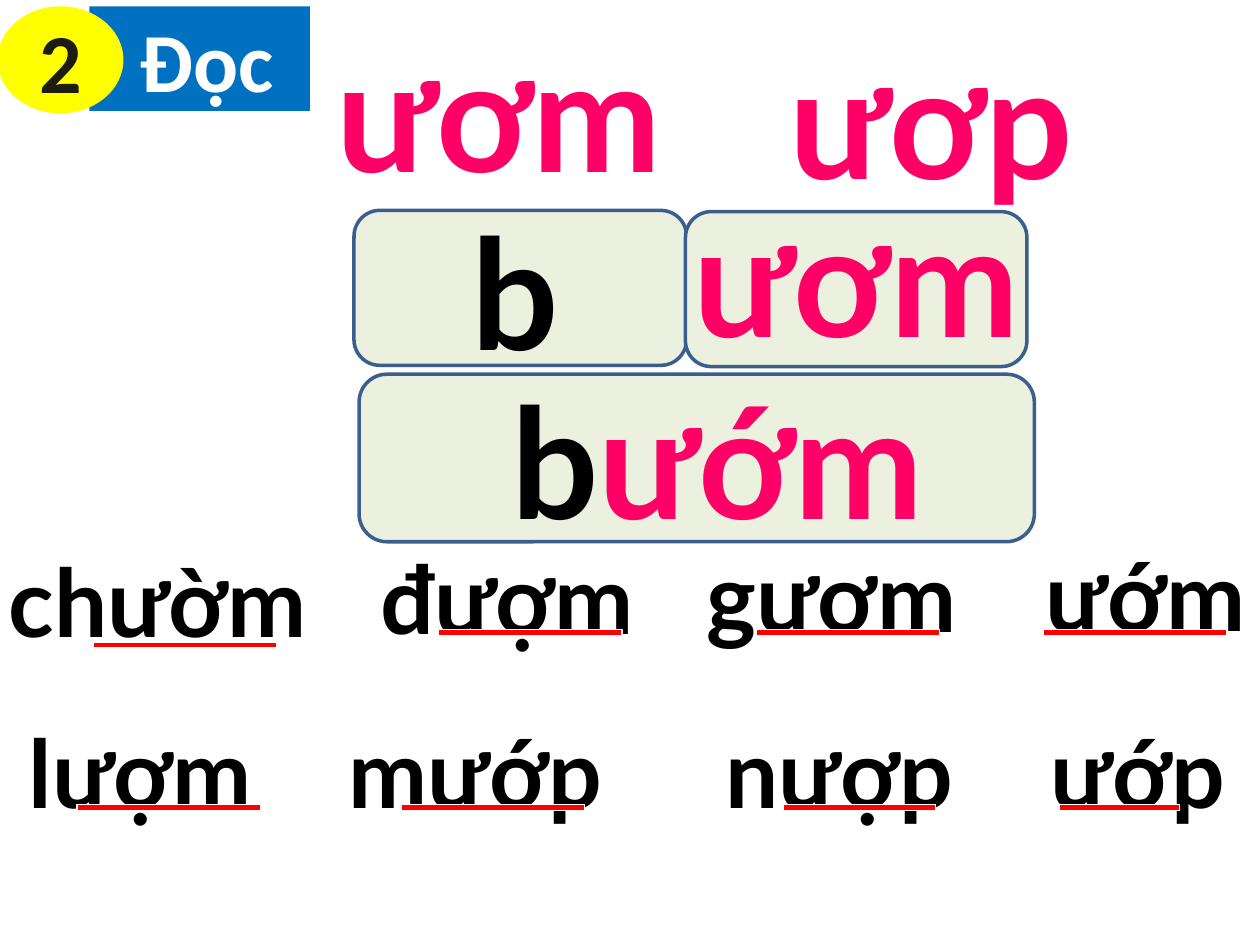
from dataclasses import dataclass

from lxml.etree import SubElement
from pptx import Presentation
from pptx.dml.color import RGBColor
from pptx.enum.shapes import MSO_SHAPE as Shape
from pptx.enum.text import MSO_ANCHOR as Anchor, MSO_AUTO_SIZE as AutoSize, PP_ALIGN as Align
from pptx.oxml.ns import qn
from pptx.util import Pt


@dataclass(frozen=True)
class Theme:
    blue: str = "0070C0"
    yellow: str = "FFFF00"
    white: str = "FFFFFF"
    ink: str = "1E1C11"
    black: str = "000000"
    pink: str = "FF0066"
    card: str = "EBF1DE"
    card_line: str = "3A5F8C"
    red: str = "FF0000"
    heading_font: str = "Calibri"
    reading_font: str = "Lato"
    heading_size: int = 48
    word_size: int = 54
    rhyme_size: int = 88


THEME = Theme()
EMU_PER_PX = 9144
SLIDE_SIZE = (1000, 750)
HEADING = ("Đọc", (71, 5, 175, 83))
NUMBER = ("2", (-2, 5, 100, 85))
HEADING_INDENT = 21

WORD_HEIGHT = 101
WORDS = [
    ("chườm", -3, 426, 297),
    ("đượm", 292, 424, 258),
    ("gươm", 551, 422, 258),
    ("ướm", 820, 421, 258),
    ("lượm", 13, 562, 293),
    ("nượp", 566, 562, 258),
    ("ướp", 824, 562, 258),
    ("mướp", 267, 562, 258),
]

RHYME_HEIGHT = 158
RHYMES = [
    ([("ươm", THEME.pink)], 257, 10, 296),
    ([("ươp", THEME.pink)], 617, 15, 262),
]
CARDS = [(281, 167, 264, 123), (544, 168, 271, 123), (285, 297, 536, 133)]
CARD_LETTERS = [
    ([("b", THEME.black)], 364, 151, 120),
    ([("ươm", THEME.pink)], 541, 141, 296),
    ([("b", THEME.black), ("ướm", THEME.pink)], 396, 285, 365),
]

UNDERLINE_HEIGHT = 20
UNDERLINES = [
    (48, 502, 198),
    (322, 492, 198),
    (574, 492, 198),
    (802, 492, 198),
    (35, 631, 198),
    (292, 631, 198),
    (600, 631, 164),
    (824, 631, 129),
]


def px(length):
    return length * EMU_PER_PX


def place(part, box):
    part.left, part.top, part.width, part.height = map(px, box)


def paint(part, fill, line=None, weight=0):
    part.fill.solid()
    part.fill.fore_color.rgb = RGBColor.from_string(fill)
    if line:
        part.line.color.rgb = RGBColor.from_string(line)
        part.line.width = Pt(weight)
    else:
        part.line.fill.background()


def add_block(slide, geometry, box, *paints):
    block = slide.shapes.add_shape(geometry, *map(px, box))
    block.shadow.inherit = False
    paint(block, *paints)
    return block


def write(paragraph, runs, size, font):
    for text, color in runs:
        run = paragraph.add_run()
        run.text = text
        run.font.name = font
        run.font.size = Pt(size)
        run.font.bold = True
        run.font.color.rgb = RGBColor.from_string(color)


def write_heading(part, text, color):
    frame = part.text_frame
    frame.vertical_anchor = Anchor.MIDDLE
    frame.paragraphs[0].alignment = Align.CENTER
    write(frame.paragraphs[0], [(text, color)], THEME.heading_size, THEME.heading_font)


def add_reading(slide, runs, box, size, wrap):
    frame = slide.shapes.add_textbox(*map(px, box)).text_frame
    frame.word_wrap = wrap
    frame.auto_size = AutoSize.SHAPE_TO_FIT_TEXT
    write(frame.paragraphs[0], runs, size, THEME.reading_font)


def add_rhymes(slide, rhymes):
    for runs, left, top, width in rhymes:
        box = (left, top, width, RHYME_HEIGHT)
        add_reading(slide, runs, box, THEME.rhyme_size, False)


def add_heading(slide):
    text, box = HEADING
    heading = slide.shapes.title
    place(heading, box)
    outline = SubElement(heading.element.spPr, qn("a:prstGeom"), prst="roundRect")
    SubElement(outline, qn("a:avLst"))
    paint(heading, THEME.blue)
    heading.text_frame.margin_left = px(HEADING_INDENT)
    heading.text_frame.auto_size = AutoSize.NONE
    write_heading(heading, text, THEME.white)

    text, box = NUMBER
    number = add_block(slide, Shape.OVAL, box, THEME.yellow)
    write_heading(number, text, THEME.ink)


def main():
    deck = Presentation()
    deck.slide_width, deck.slide_height = map(px, SLIDE_SIZE)
    slide = deck.slides.add_slide(deck.slide_layouts[5])
    add_heading(slide)
    for word, left, top, width in WORDS:
        box = (left, top, width, WORD_HEIGHT)
        add_reading(slide, [(word, THEME.black)], box, THEME.word_size, True)
    add_rhymes(slide, RHYMES)
    for box in CARDS:
        add_block(slide, Shape.ROUNDED_RECTANGLE, box, THEME.card, THEME.card_line, 2)
    add_rhymes(slide, CARD_LETTERS)
    for left, top, width in UNDERLINES:
        box = (left, top, width, UNDERLINE_HEIGHT)
        add_block(slide, Shape.MATH_MINUS, box, THEME.red, THEME.white, 0.75)
    deck.save("out.pptx")


if __name__ == "__main__":
    main()
